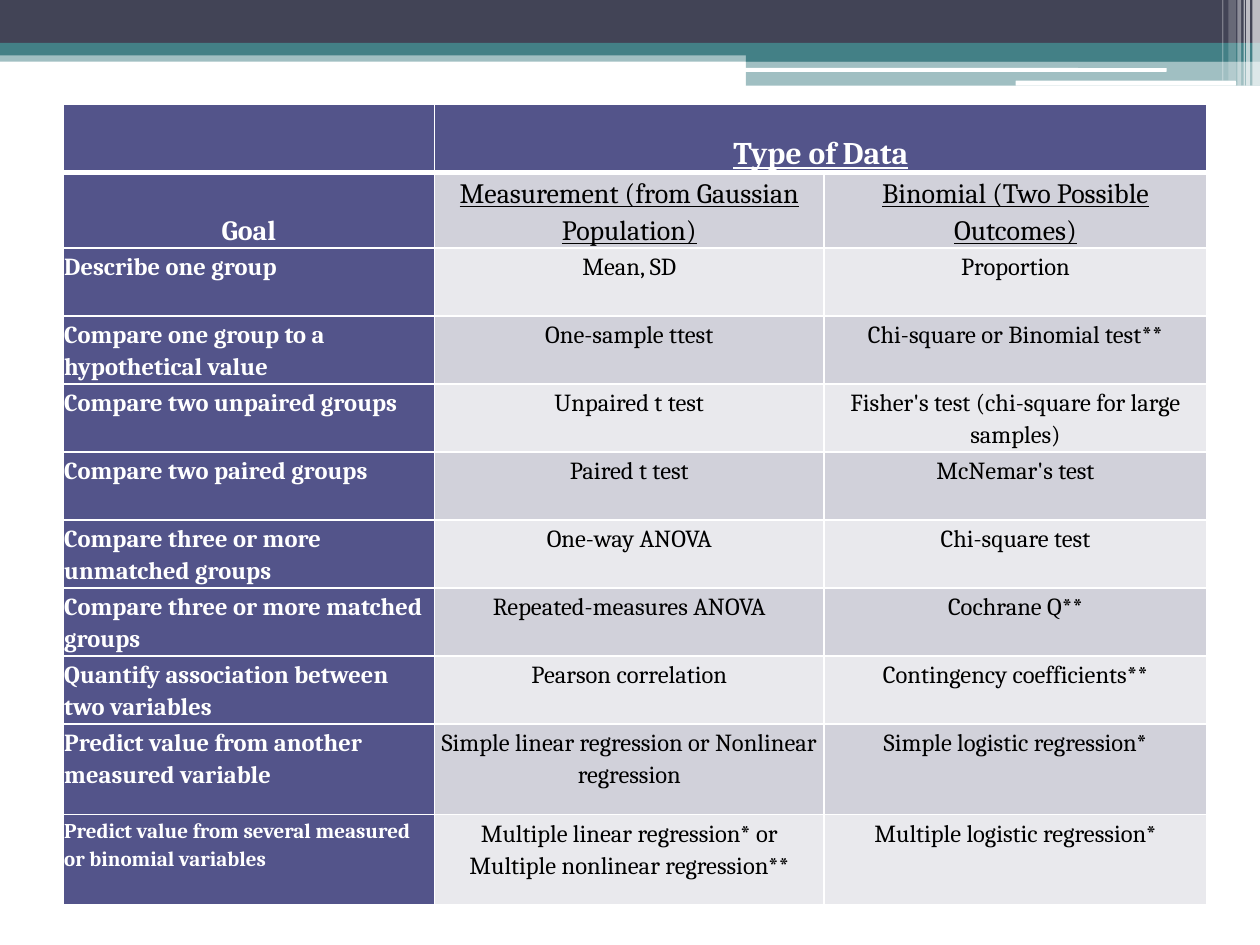
from lxml import etree
from pptx import Presentation
from pptx.dml.color import RGBColor
from pptx.enum.shapes import MSO_SHAPE
from pptx.enum.text import MSO_ANCHOR, PP_ALIGN
from pptx.oxml.ns import qn
from pptx.util import Inches, Pt

RECT, ROUNDED = MSO_SHAPE.RECTANGLE, MSO_SHAPE.ROUNDED_RECTANGLE
LEFT, CENTER = PP_ALIGN.LEFT, PP_ALIGN.CENTER
TOP, BOTTOM = MSO_ANCHOR.TOP, MSO_ANCHOR.BOTTOM

WHITE = RGBColor(0xFF, 0xFF, 0xFF)
BLACK = RGBColor(0x00, 0x00, 0x00)
SLATE = RGBColor(0x42, 0x44, 0x56)
TEAL = RGBColor(0x43, 0x80, 0x86)
INDIGO = RGBColor(0x53, 0x54, 0x8A)
BANDS = [RGBColor(0xD1, 0xD1, 0xDA), RGBColor(0xE9, 0xE9, 0xED)]


def write_cell(cell, text, size=14, color=BLACK, bold=False, underline=False,
               align=CENTER, anchor=TOP):
    cell.margin_left = cell.margin_right = cell.margin_top = Inches(0.01)
    cell.margin_bottom = 0
    cell.vertical_anchor = anchor
    para = cell.text_frame.paragraphs[0]
    para.alignment = align
    para.line_spacing = 1.15
    span = para.add_run()
    span.text = text
    font = span.font
    font.name, font.size, font.color.rgb = "Cambria", Pt(size), color
    font.bold, font.underline = bold, underline


def style_cell(cell, fill, bottom_width=1):
    """Draw white borders, then fill the cell."""
    properties = cell._tc.get_or_add_tcPr()
    for side, width in (("L", 1), ("R", 1), ("T", 1), ("B", bottom_width)):
        line = etree.SubElement(properties, qn(f"a:ln{side}"), w=str(Pt(width)))
        solid = etree.SubElement(line, qn("a:solidFill"))
        etree.SubElement(solid, qn("a:srgbClr"), val=str(WHITE))
    cell.fill.solid()
    cell.fill.fore_color.rgb = fill


deck = Presentation()
deck.slide_width, deck.slide_height = Inches(10), Inches(7.5)
page = deck.slides.add_slide(deck.slide_layouts[6])

# Header bands and the fine stripes at the right: shape, place, colour, opacity
bands = [
    (RECT, 0, 0.4, 10, 0.09, TEAL, 50),
    (RECT, 0, 0, 10, 0.34, SLATE, 100),
    (RECT, 0, 0.34, 10, 0.1, TEAL, 100),
    (RECT, 5.92, 0.39, 4.08, 0.1, TEAL, 100),
    (RECT, 5.92, 0.48, 4.08, 0.2, TEAL, 50),
    (ROUNDED, 5.91, 0.54, 3.35, 0.03, WHITE, 100),
    (ROUNDED, 8.06, 0.64, 1.75, 0.04, WHITE, 100),
]
stripes = [(9.94, 0.06, 0.68, 65), (9.89, 0.03, 0.68, 65), (9.87, 0.01, 0.68, 60),
           (9.82, 0.03, 0.68, 40), (9.75, 0.06, 0.64, 20), (9.7, 0.01, 0.64, 30)]
bands += [(RECT, left, 0, width, height, WHITE, opacity)
          for left, width, height, opacity in stripes]

for kind, left, top, width, height, color, opacity in bands:
    box = page.shapes.add_shape(kind, Inches(left), Inches(top),
                                Inches(width), Inches(height))
    box.shadow.inherit = False
    box.line.fill.background()
    box.fill.solid()
    box.fill.fore_color.rgb = color
    if opacity < 100:
        tint = box.fill._xPr.find(".//" + qn("a:srgbClr"))
        etree.SubElement(tint, qn("a:alpha"), val=str(opacity * 1000))

# Table grid
goals = [
    ("Describe one group", "Mean, SD", "Proportion"),
    ("Compare one group to a hypothetical value", "One-sample ttest",
     "Chi-square or Binomial test**"),
    ("Compare two unpaired groups", "Unpaired t test",
     "Fisher's test (chi-square for large samples)"),
    ("Compare two paired groups", "Paired t test", "McNemar's test"),
    ("Compare three or more unmatched groups", "One-way ANOVA", "Chi-square test"),
    ("Compare three or more matched groups", "Repeated-measures ANOVA", "Cochrane Q**"),
    ("Quantify association between two variables", "Pearson correlation",
     "Contingency coefficients**"),
    ("Predict value from another measured variable",
     "Simple linear regression or Nonlinear regression", "Simple logistic regression*"),
    ("Predict value from several measured or binomial variables",
     "Multiple linear regression* or Multiple nonlinear regression**",
     "Multiple logistic regression*"),
]
column_widths = [2.95, 3.09, 3.04]
row_heights = [0.54, 0.59] + [0.54] * 7 + [0.72] * 2
table = page.shapes.add_table(
    len(row_heights), len(column_widths), Inches(0.5), Inches(0.83),
    Inches(sum(column_widths)), Inches(sum(row_heights))).table
table.first_row = table.horz_banding = False
for column, width in zip(table.columns, column_widths):
    column.width = Inches(width)
for row, height in zip(table.rows, row_heights):
    row.height = Inches(height)

for r in range(len(row_heights)):
    for c in range(len(column_widths)):
        fill = INDIGO if r == 0 or c == 0 else BANDS[(r - 1) % 2]
        style_cell(table.cell(r, c), fill, bottom_width=3 if r == 0 else 1)

# Heading rows
table.cell(0, 1).merge(table.cell(0, 2))
write_cell(table.cell(0, 1), "Type of Data", size=18, color=WHITE, bold=True,
           underline=True, anchor=BOTTOM)
write_cell(table.cell(1, 0), "Goal", size=16, color=WHITE, bold=True, anchor=BOTTOM)
for c, heading in enumerate(["Measurement (from Gaussian Population)",
                             "Binomial (Two Possible Outcomes)"], start=1):
    write_cell(table.cell(1, c), heading, size=16, underline=True, anchor=BOTTOM)

# One row per goal; the last goal is set smaller
for r, (goal, *tests) in enumerate(goals, start=2):
    write_cell(table.cell(r, 0), goal, size=12 if goal == goals[-1][0] else 14,
               color=WHITE, bold=True, align=LEFT)
    for c, test in enumerate(tests, start=1):
        write_cell(table.cell(r, c), test)

deck.save("out.pptx")
